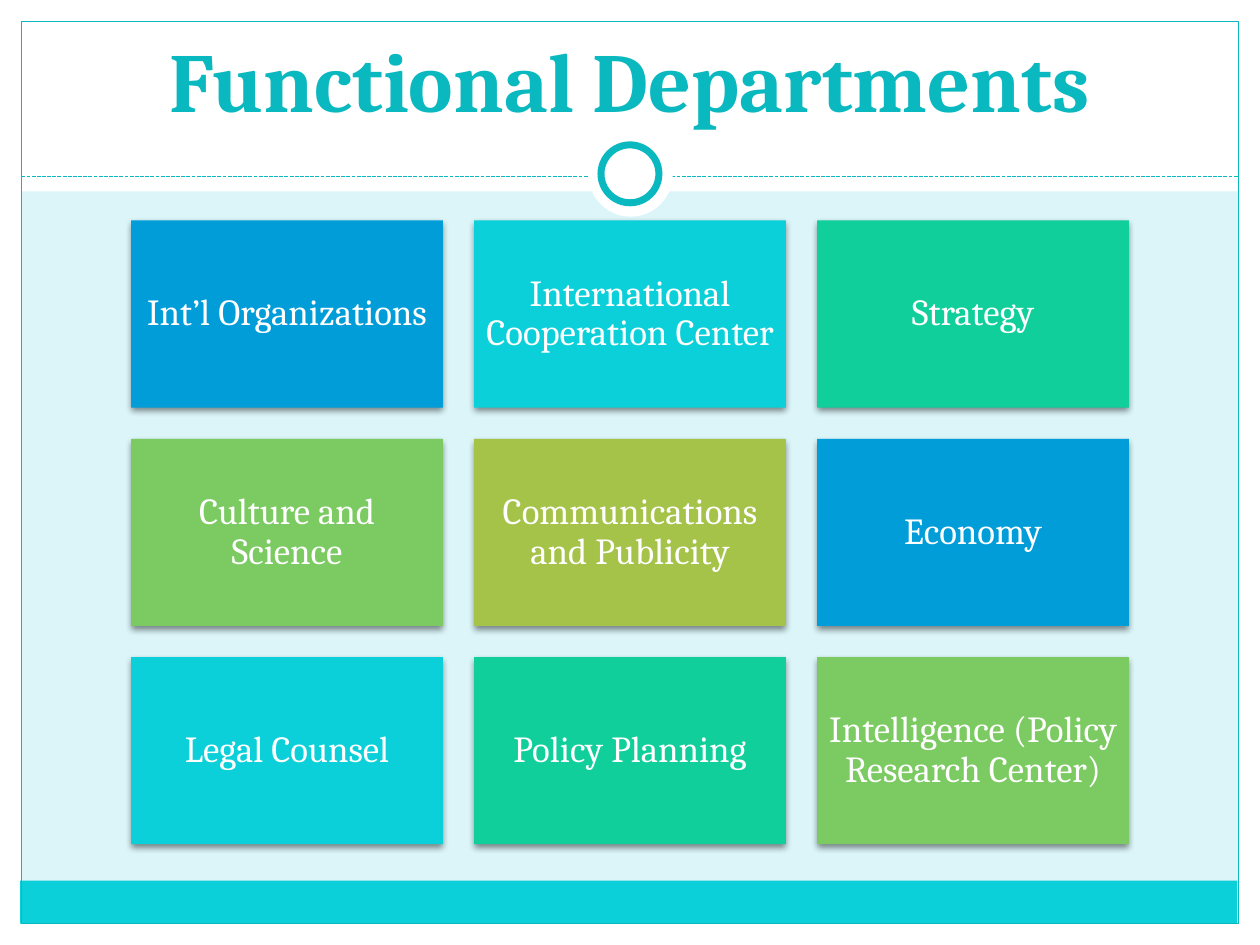
"""Build the Functional Departments slide with a three-column grid of cards."""
from lxml import etree
from pptx import Presentation, util as u
from pptx.dml.color import RGBColor
from pptx.enum import dml, shapes, text
from pptx.oxml import parse_xml
from pptx.oxml.ns import nsdecls, qn

WHITE = RGBColor(0xFF, 0xFF, 0xFF)
PALE = RGBColor(0xDB, 0xF5, 0xF9)
TEAL = RGBColor(0x0A, 0xB8, 0xBF)
BLUE = RGBColor(0x00, 0x9D, 0xD9)
CYAN = RGBColor(0x0B, 0xD0, 0xD9)
MINT = RGBColor(0x10, 0xCF, 0x9B)
GREEN = RGBColor(0x7C, 0xCA, 0x62)
OLIVE = RGBColor(0xA5, 0xC2, 0x49)

TITLE = "Functional Departments"
DEPARTMENTS = [
    "Int’l Organizations", "International Cooperation Center", "Strategy",
    "Culture and Science", "Communications and Publicity", "Economy",
    "Legal Counsel", "Policy Planning", "Intelligence (Policy Research Center)",
]
CARD_COLORS = [BLUE, CYAN, MINT, GREEN, OLIVE]
COLUMNS = 3
LEFT, TOP, CARD_W, CARD_H, GAP = 1.04, 1.75, 2.475, 1.485, 0.2475

RECT, OVAL = shapes.MSO_SHAPE.RECTANGLE, shapes.MSO_SHAPE.OVAL
FRAME = [
    (RECT, (0, 7.33, 10, 0.17), WHITE, None),
    (RECT, (0, 0, 10, 1.52), WHITE, None),
    (RECT, (0, 0, 0.17, 7.5), WHITE, None),
    (RECT, (9.83, 0, 0.17, 7.5), WHITE, None),
    (RECT, (0.16, 6.99, 9.66, 0.34), CYAN, None),
    (RECT, (0.17, 0.17, 9.66, 7.16), None, 0.75),
]
RING = [
    (OVAL, (4.67, 1.05, 0.67, 0.67), WHITE, None),
    (OVAL, (4.77, 1.15, 0.46, 0.46), WHITE, 4),
]
CARD_SHADOW = (
    f'<a:effectLst {nsdecls("a")}><a:outerShdw blurRad="50800" dist="25400" dir="5400000" '
    'rotWithShape="0"><a:srgbClr val="000000"><a:alpha val="45000"/></a:srgbClr>'
    '</a:outerShdw></a:effectLst>'
)


def add_shape(s, kind, box, fill, line_width=None):
    sp = s.shapes.add_shape(kind, *map(u.Inches, box))
    sp.shadow.inherit = False
    if fill is None:
        sp.fill.background()
    else:
        sp.fill.solid()
        sp.fill.fore_color.rgb = fill
    if line_width is None:
        sp.line.fill.background()
    else:
        sp.line.color.rgb = TEAL
        sp.line.width = u.Pt(line_width)
    return sp


def write(sp, content, size, color, bold=False, spacing=1.0, anchor=text.MSO_ANCHOR.MIDDLE):
    tf = sp.text_frame
    tf.word_wrap = True
    tf.auto_size = text.MSO_AUTO_SIZE.NONE
    tf.vertical_anchor = anchor
    p = tf.paragraphs[0]
    p.alignment = text.PP_ALIGN.CENTER
    p.line_spacing = spacing
    r = p.add_run()
    r.text = content
    r.font.name = "Cambria"
    r.font.size = u.Pt(size)
    r.font.bold = bold
    r.font.color.rgb = color


def add_divider(s):
    y = u.Inches(1.4)
    line = s.shapes.add_connector(
        shapes.MSO_CONNECTOR.STRAIGHT, u.Inches(0.17), y, u.Inches(9.83), y)
    line.line.color.rgb = TEAL
    line.line.width = u.Pt(0.75)
    line.line.dash_style = dml.MSO_LINE.SQUARE_DOT
    etree.SubElement(line.element.spPr, qn("a:effectLst"))


def add_card(s, index, name):
    row, col = divmod(index, COLUMNS)
    box = (LEFT + col * (CARD_W + GAP), TOP + row * (CARD_H + GAP), CARD_W, CARD_H)
    sp = add_shape(s, RECT, box, CARD_COLORS[index % len(CARD_COLORS)])
    sp_pr = sp.element.spPr
    sp_pr.replace(sp_pr.find(qn("a:effectLst")), parse_xml(CARD_SHADOW))
    tf = sp.text_frame
    tf.margin_left = tf.margin_right = tf.margin_top = tf.margin_bottom = u.Inches(0.09)
    write(sp, name, 21, WHITE, spacing=0.9)


def main():
    prs = Presentation()
    prs.slide_width, prs.slide_height = u.Inches(10), u.Inches(7.5)
    s = prs.slides.add_slide(prs.slide_layouts[5])
    s.background.fill.solid()
    s.background.fill.fore_color.rgb = PALE

    for part in FRAME:
        add_shape(s, *part)
    add_divider(s)
    for part in RING:
        add_shape(s, *part)

    title = s.shapes.title
    title.left, title.top, title.width, title.height = map(u.Inches, (0.33, 0.25, 9.33, 0.83))
    write(title, TITLE, 48, TEAL, bold=True, anchor=text.MSO_ANCHOR.BOTTOM)
    title.element.getparent().append(title.element)

    for index, name in enumerate(DEPARTMENTS):
        add_card(s, index, name)
    prs.save("out.pptx")


if __name__ == "__main__":
    main()
